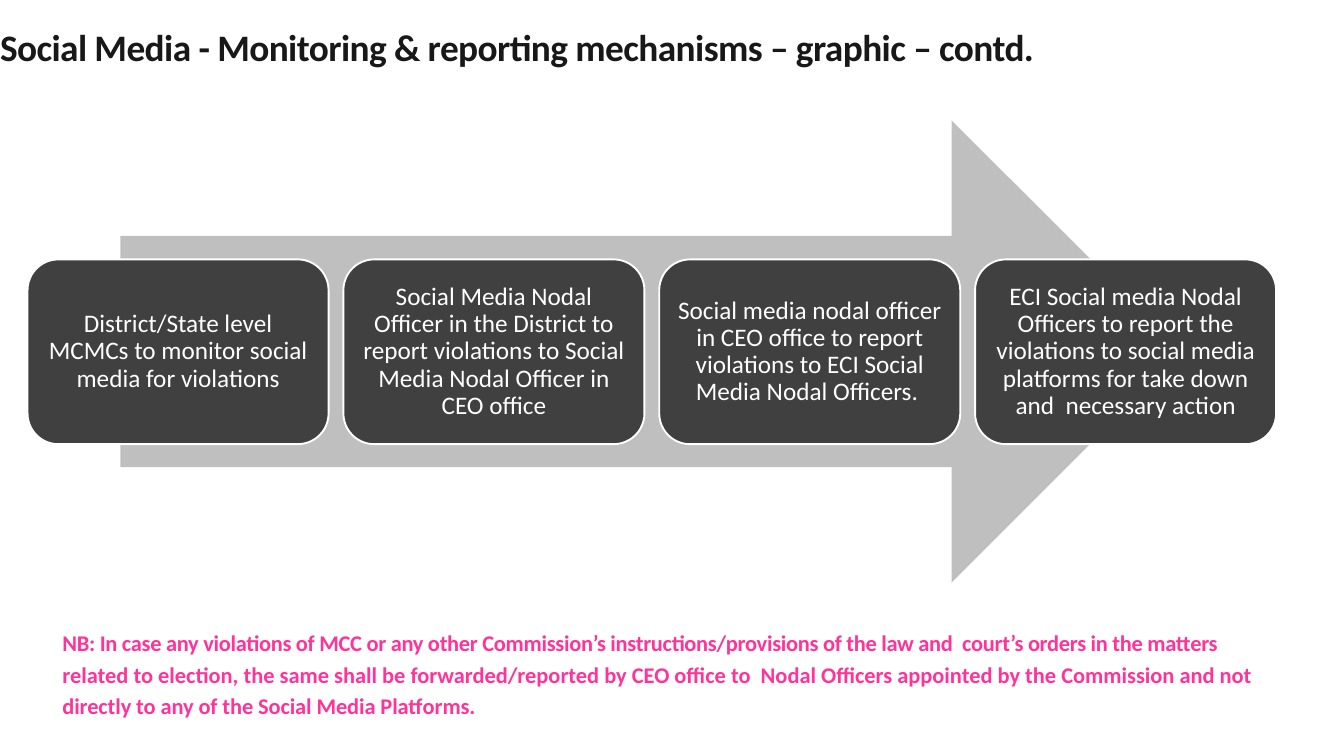
from pptx import Presentation
from pptx.dml.color import RGBColor
from pptx.enum.shapes import MSO_SHAPE
from pptx.enum.text import MSO_ANCHOR, PP_ALIGN
from pptx.util import Inches, Pt

ARROW, ROUNDED = MSO_SHAPE.RIGHT_ARROW, MSO_SHAPE.ROUNDED_RECTANGLE
TOP, MIDDLE = MSO_ANCHOR.TOP, MSO_ANCHOR.MIDDLE
LEFT, CENTER = PP_ALIGN.LEFT, PP_ALIGN.CENTER

COLORS = {"arrow": "BFBFBF", "step": "404040", "white": "FFFFFF",
          "note": "FF3399", "title": "181818"}

TITLE = "Social Media - Monitoring & reporting mechanisms – graphic – contd."
STEPS = [
    "District/State level MCMCs to monitor social media for violations",
    "Social Media Nodal Officer in the District to report violations to "
    "Social Media Nodal Officer in CEO office",
    "Social media nodal officer in CEO office to report violations to "
    "ECI Social Media Nodal Officers. ",
    "ECI Social media Nodal Officers to report the violations to social media "
    "platforms for take down and  necessary action",
]
# Note text with its letter spacing in points
NOTE = [
    ("NB: In case any violations of MCC or any other Commission’s "
     "instructions/provisions of the law and  court’s orders in the matters ", -0.3),
    ("related to election, the same shall be forwarded/reported by CEO office to  "
     "Nodal Officers appointed by the Commission and not ", 0),
    ("directly to any of the Social Media Platforms.", -0.1),
]


class SlideBuilder:
    font = "Calibri"

    def __init__(self, slide):
        self.slide = slide

    def color(self, name):
        return RGBColor.from_string(COLORS[name])

    def format_run(self, run, size, color, bold=False, spacing=0):
        run.font.name = self.font
        run.font.size = Pt(size)
        run.font.bold = bold
        run.font.color.rgb = self.color(color)
        if spacing:
            run.font._element.set("spc", str(round(spacing * 100)))

    def format_frame(self, frame, anchor, left, top, right, bottom):
        frame.word_wrap = True
        frame.vertical_anchor = anchor
        frame.margin_left, frame.margin_top = Inches(left), Inches(top)
        frame.margin_right, frame.margin_bottom = Inches(right), Inches(bottom)

    def title(self, text, left, top, width, height):
        title = self.slide.shapes.title
        title.left, title.top = Inches(left), Inches(top)
        title.width, title.height = Inches(width), Inches(height)
        frame = title.text_frame
        frame.text = text
        self.format_frame(frame, TOP, 0, 0.18, 0, 0)
        line = frame.paragraphs[0]
        line.alignment = LEFT
        line.line_spacing = Pt(60.9)
        line.space_before = Pt(13.2)
        self.format_run(line.runs[0], 40, "title", bold=True, spacing=-0.6)

    def shape(self, kind, fill, left, top, width, height):
        shape = self.slide.shapes.add_shape(
            kind, Inches(left), Inches(top), Inches(width), Inches(height))
        shape.shadow.inherit = False
        shape.fill.solid()
        shape.fill.fore_color.rgb = self.color(fill)
        shape.line.fill.background()
        return shape

    def step(self, text, left, top, width, height):
        step = self.shape(ROUNDED, "step", left, top, width, height)
        step.line.color.rgb = self.color("white")
        step.line.width = Pt(2)
        frame = step.text_frame
        frame.text = text
        # The rounded shape already insets its text by about 0.13
        self.format_frame(frame, MIDDLE, 0.11, 0.11, 0.11, 0.11)
        paragraph = frame.paragraphs[0]
        paragraph.alignment = CENTER
        paragraph.line_spacing = 0.9
        self.format_run(paragraph.runs[0], 27, "white")

    def note(self, parts, left, top, width, height):
        note = self.slide.shapes.add_textbox(
            Inches(left), Inches(top), Inches(width), Inches(height))
        self.format_frame(note.text_frame, TOP, 0.1, 0.05, 0.1, 0.05)
        paragraph = note.text_frame.paragraphs[0]
        paragraph.line_spacing = 1.18
        for text, spacing in parts:
            run = paragraph.add_run()
            run.text = text
            self.format_run(run, 24, "note", bold=True, spacing=spacing)


def main():
    prs = Presentation()
    prs.slide_width, prs.slide_height = Inches(20), Inches(11.25)
    builder = SlideBuilder(prs.slides.add_slide(prs.slide_layouts[5]))

    builder.title(TITLE, 0, 0, 20, 1.22)

    # Process arrow with the reporting steps on it
    builder.shape(ARROW, "arrow", 1.79, 1.79, 15.81, 6.88)
    for index, text in enumerate(STEPS):
        builder.step(text, 0.41 + index * 4.7, 3.86, 4.48, 2.75)

    # Note below the arrow
    builder.note(NOTE, 0.83, 9.24, 18.33, 1.53)

    prs.save("out.pptx")


if __name__ == "__main__":
    main()
